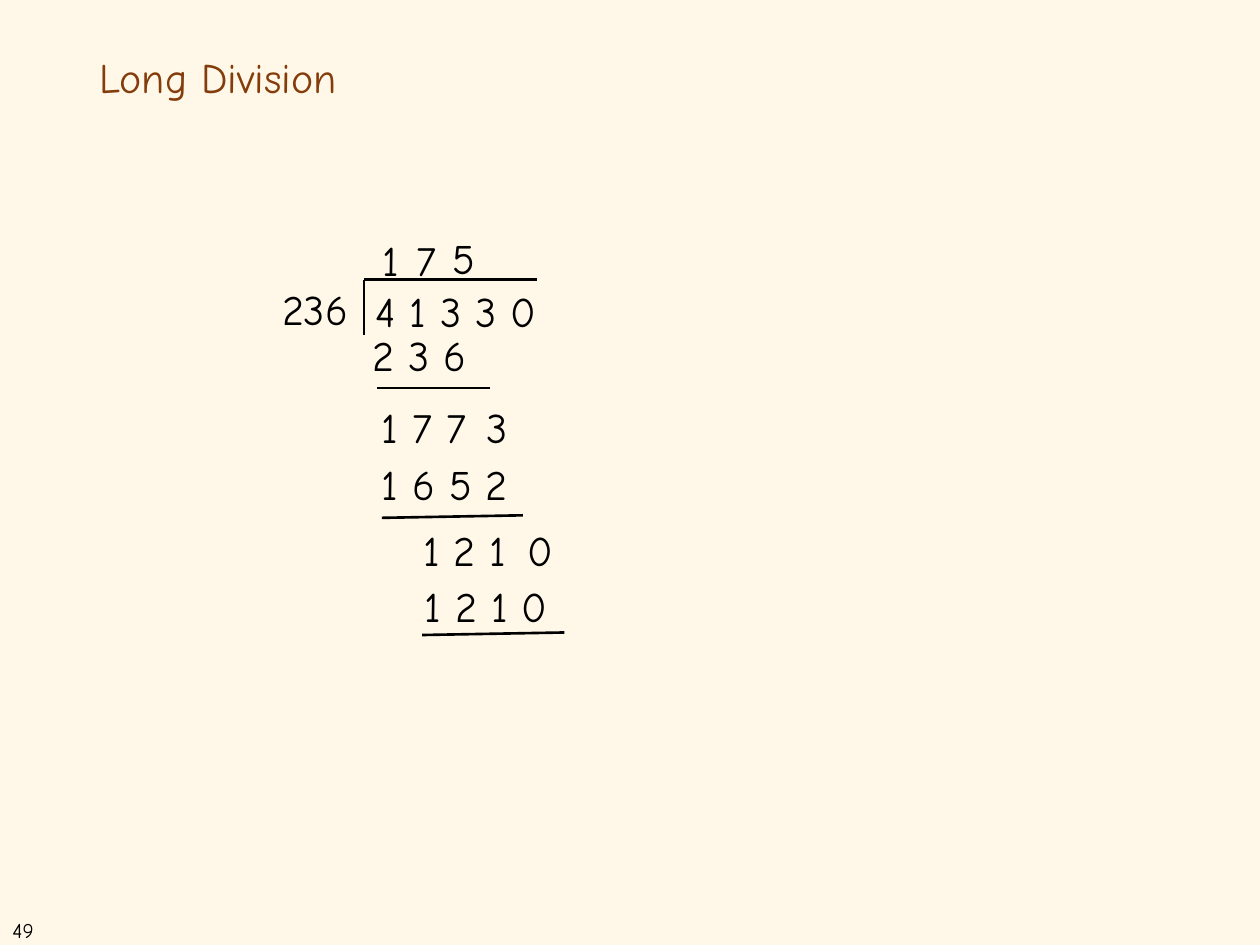
from lxml import etree
from pptx import Presentation
from pptx.dml.color import RGBColor
from pptx.enum.shapes import MSO_CONNECTOR
from pptx.enum.text import MSO_ANCHOR, MSO_AUTO_SIZE
from pptx.oxml.ns import qn
from pptx.util import Inches, Pt

STRAIGHT = MSO_CONNECTOR.STRAIGHT
MIDDLE = MSO_ANCHOR.MIDDLE
GROW = MSO_AUTO_SIZE.SHAPE_TO_FIT_TEXT
FONT = "Comic Neue"
COLORS = {"background": "FFF8E8", "title": "843C0B", "ink": "000000"}

prs = Presentation()
prs.slide_width, prs.slide_height = Inches(10), Inches(7.5)
s = prs.slides.add_slide(prs.slide_layouts[6])
s.background.fill.solid()
s.background.fill.fore_color.rgb = RGBColor.from_string(COLORS["background"])


def add_text(text, x, y, w, h, size=24, color="ink"):
    tf = s.shapes.add_textbox(Inches(x), Inches(y), Inches(w), Inches(h)).text_frame
    p = tf.paragraphs[0]
    p.text = text
    p.font.name, p.font.size = FONT, Pt(size)
    p.font.color.rgb = RGBColor.from_string(COLORS[color])
    return tf


tf = add_text("Long Division", 0.69, 0.4, 8.62, 0.47, color="title")
tf.word_wrap = True
tf.vertical_anchor = MIDDLE
tf.paragraphs[0].line_spacing = 0.9

tf = add_text("49", 0, 7.23, 0.49, 0.3, size=12)
tf.word_wrap = True
tf.auto_size = GROW

# Digits of the working: text, left, top, width
digits = [
    ("1", 2.94, 1.81, 0.33),
    ("7", 3.21, 1.81, 0.39),
    ("5", 3.49, 1.8, 0.39),
    ("236", 2.14, 2.2, 0.78),
    ("4 1 3 3 0", 2.88, 2.22, 1.6),
    ("2 3 6", 2.86, 2.57, 1.03),
    ("1 7 7", 2.93, 3.14, 1.09),
    ("3", 3.76, 3.14, 0.39),
    ("1 6 5 2", 2.93, 3.59, 1.41),
    ("1 2 1", 3.26, 4.11, 0.9),
    ("0", 4.09, 4.11, 0.39),
    ("1 2 1 0", 3.27, 4.56, 1.22),
]
for text, x, y, w in digits:
    tf = add_text(text, x, y, w, 0.5)
    tf.word_wrap = False
    tf.auto_size = GROW

# Division bracket, then the rule under each subtraction: x1, y1, x2, y2
rules = [
    (2.89, 2.22, 2.89, 2.66),
    (4.26, 2.22, 2.89, 2.22),
    (3.89, 3.08, 2.99, 3.08),
    (4.15, 4.09, 3.03, 4.11),
    (4.48, 5.02, 3.35, 5.04),
]
for ends in rules:
    line = s.shapes.add_connector(STRAIGHT, *[Inches(v) for v in ends])
    line.line.color.rgb = RGBColor.from_string(COLORS["ink"])
    line.line.width = Pt(1.5)
    etree.SubElement(line._element.spPr, qn("a:effectLst"))

prs.save("out.pptx")
